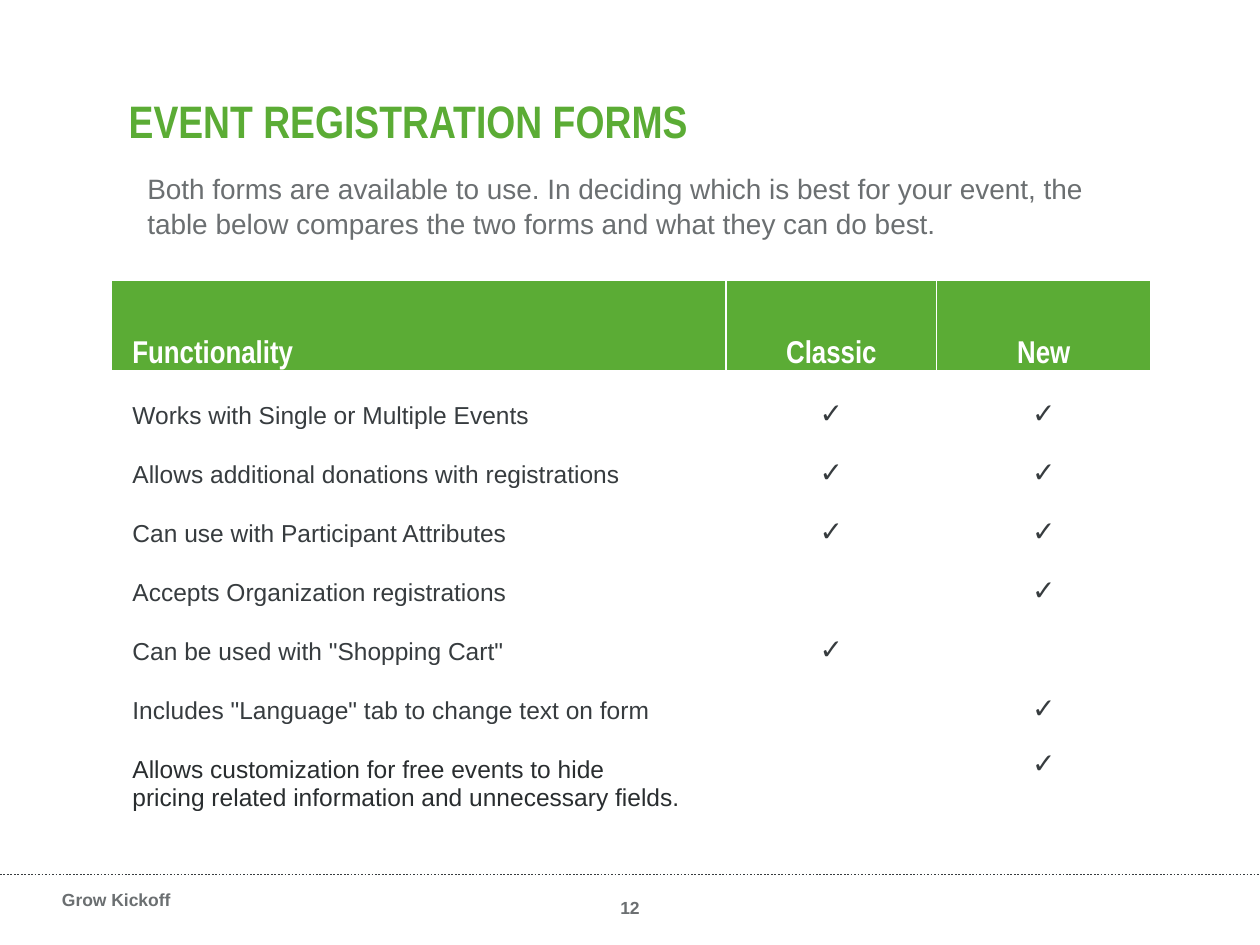
from lxml import etree
from pptx import Presentation
from pptx.dml.color import RGBColor
from pptx.enum.dml import MSO_LINE
from pptx.enum.shapes import MSO_CONNECTOR
from pptx.enum.text import MSO_ANCHOR, PP_ALIGN
from pptx.oxml import parse_xml
from pptx.oxml.ns import nsdecls, qn
from pptx.util import Cm, Pt

LEFT, CENTER = PP_ALIGN.LEFT, PP_ALIGN.CENTER
TOP, MIDDLE, BOTTOM = MSO_ANCHOR.TOP, MSO_ANCHOR.MIDDLE, MSO_ANCHOR.BOTTOM
DOTS = MSO_LINE.ROUND_DOT
STRAIGHT = MSO_CONNECTOR.STRAIGHT

GREEN, GREY, DARK, BLACK, WHITE = "5BAC35", "6B6F71", "373C3F", "292D2F", "FFFFFF"
COLS = [12.4, 4.24, 4.32]
HEAD = ["Functionality", "Classic", "New"]
ROWS = [
    ("Works with Single or Multiple Events", "✓", "✓"),
    ("Allows additional donations with registrations", "✓", "✓"),
    ("Can use with Participant Attributes", "✓", "✓"),
    ("Accepts Organization registrations", "", "✓"),
    ('Can be used with "Shopping Cart"', "✓", ""),
    ('Includes "Language" tab to change text on form', "", "✓"),
    ("Allows customization for free events to hide\n"
     "pricing related information and unnecessary fields.", "", "✓"),
]
HEIGHTS = [1.83] + [1.19] * 6 + [1.75]


def paint(code):
    """Return the colour for a hex string."""
    return RGBColor.from_string(code)


def write(frame, text, size=14, font="Arial", color=DARK, bold=False,
          align=LEFT, space=1.0):
    """Fill a text frame, one paragraph for each line of text."""
    frame.text = text
    frame.word_wrap = True
    for para in frame.paragraphs:
        para.alignment = align
        para.line_spacing = space
        para.font.size = Pt(size)
        para.font.name = font
        para.font.bold = bold
        para.font.color.rgb = paint(color)


def add_text(slide, box, text, anchor=TOP, **style):
    """Add a text box in the given box."""
    frame = slide.shapes.add_textbox(*map(Cm, box)).text_frame
    frame.vertical_anchor = anchor
    write(frame, text, **style)


def add_title(slide, box, text):
    """Move and format the title placeholder."""
    title = slide.shapes.title
    title.left, title.top, title.width, title.height = map(Cm, box)
    title.text_frame.vertical_anchor = MIDDLE
    write(title.text_frame, text, size=26, font="Arial Narrow", color=GREEN, bold=True)


def set_cell(cell, text, fill=None, left=0.03, bottom=0, **style):
    """Give a cell its borders, fill, margins and text."""
    props = cell._tc.get_or_add_tcPr()
    for side in "LRTB":
        props.append(parse_xml(
            f'<a:ln{side} {nsdecls("a")} w="12700"><a:solidFill>'
            f'<a:srgbClr val="{WHITE}"/></a:solidFill></a:ln{side}>'))
    if fill:
        cell.fill.solid()
        cell.fill.fore_color.rgb = paint(fill)
    else:
        cell.fill.background()
    cell.margin_left, cell.margin_bottom = Cm(left), Cm(bottom)
    cell.margin_right = cell.margin_top = Cm(0.03)
    cell.vertical_anchor = BOTTOM
    write(cell.text_frame, text, **style)


def add_grid(slide, left, top):
    """Add the table that compares the two forms."""
    box = map(Cm, (left, top, sum(COLS), sum(HEIGHTS)))
    grid = slide.shapes.add_table(len(HEIGHTS), len(COLS), *box).table
    grid.horz_banding = False
    for col, width in zip(grid.columns, COLS):
        col.width = Cm(width)
    for row, height in zip(grid.rows, HEIGHTS):
        row.height = Cm(height)
    for c, text in enumerate(HEAD):
        set_cell(grid.cell(0, c), text, fill=GREEN, left=0.03 if c else 0.43,
                 size=18, font="Arial Narrow", color=WHITE, bold=True,
                 align=CENTER if c else LEFT)
    for r, (label, *marks) in enumerate(ROWS, 1):
        last = r == len(ROWS)
        set_cell(grid.cell(r, 0), label, left=0.43, color=BLACK if last else DARK)
        for c, mark in enumerate(marks, 1):
            set_cell(grid.cell(r, c), mark, bottom=0.65 if last else 0,
                     size=16, bold=True, align=CENTER)


def add_footer(slide, top, width):
    """Add the dotted rule, the footer text and the page number."""
    rule = slide.shapes.add_connector(STRAIGHT, 0, Cm(top), Cm(width), Cm(top))
    rule.line.color.rgb = paint(DARK)
    rule.line.width = Pt(1)
    rule.line.dash_style = DOTS
    etree.SubElement(rule._element.spPr, qn("a:effectLst"))
    style = {"size": 10, "color": GREY, "bold": True, "anchor": MIDDLE}
    add_text(slide, (1, top + 0.05, 7.1, 0.92), "Grow Kickoff", **style)
    add_text(slide, (width / 2 - 0.64, top + 0.15, 1.28, 1.02), "12",
             align=CENTER, **style)


def main():
    """Build the slide and save it."""
    deck = Presentation()
    deck.slide_width, deck.slide_height = Cm(25.4), Cm(19.05)
    slide = deck.slides.add_slide(deck.slide_layouts[5])
    add_footer(slide, 17.63, 25.4)
    add_title(slide, (2.34, 1.68, 20.85, 1.47), "EVENT REGISTRATION FORMS")
    add_text(slide, (2.72, 3.3, 20.73, 1.63),
             "Both forms are available to use. In deciding which is best for your "
             "event, the table below compares the two forms and what they can do best.",
             size=16, color=GREY, space=1.05)
    add_grid(slide, 2.24, 5.64)
    deck.save("out.pptx")


if __name__ == "__main__":
    main()
